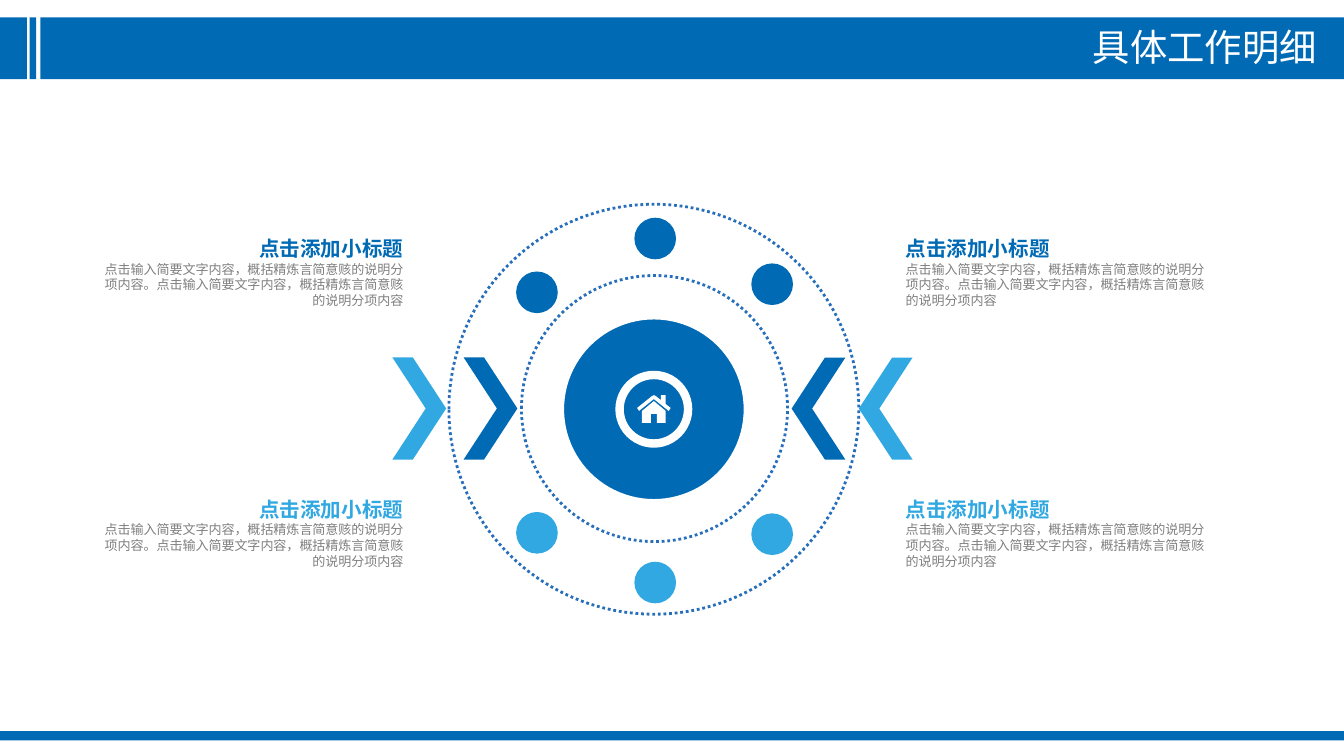
"""Build the slide of work details: two dotted rings, six dots and four captions."""
import pptx
import pptx.dml.color
import pptx.enum.dml
import pptx.enum.shapes
import pptx.enum.text
import pptx.util

Inches = pptx.util.Inches
Pt = pptx.util.Pt
RGBColor = pptx.dml.color.RGBColor
SHAPE = pptx.enum.shapes.MSO_SHAPE
ALIGN = pptx.enum.text.PP_ALIGN
ANCHOR = pptx.enum.text.MSO_ANCHOR
AUTO_SIZE = pptx.enum.text.MSO_AUTO_SIZE
ROUND_DOT = pptx.enum.dml.MSO_LINE.ROUND_DOT

BLUE = RGBColor(0x00, 0x6A, 0xB5)
SKY = RGBColor(0x31, 0xA8, 0xE1)
RING = RGBColor(0x27, 0x6E, 0xBB)
GRAY = RGBColor(0x80, 0x80, 0x80)
WHITE = RGBColor(0xFF, 0xFF, 0xFF)
FONT = "Arial"

SLIDE_WIDTH = Inches(10)
SLIDE_HEIGHT = SLIDE_WIDTH * 9 // 16
TITLE = "具体工作明细"
HEADING = "点击添加小标题"
BODY = "点击输入简要文字内容，概括精炼言简意赅的说明分项内容。" \
       "点击输入简要文字内容，概括精炼言简意赅的说明分项内容"
CAPTION_ROWS = [(1.71, BLUE), (3.65, SKY)]
CAPTION_COLUMNS = [(0.64, ALIGN.RIGHT), (6.64, ALIGN.LEFT)]
BARS = [(0.3, 0.13, 9.7, 0.46), (0, 0.13, 0.2, 0.46),
        (0.22, 0.13, 0.05, 0.46), (0, 5.44, 10, 0.07)]
CHEVRONS = [(3.45, 0, BLUE), (5.89, 180, BLUE), (2.92, 0, SKY), (6.39, 180, SKY)]
DISKS = [(4.19, 2.37, 1.35, 1), (4.61, 2.79, 0.51, 4.5)]
RINGS = [(3.34, 1.52, 3.05), (3.88, 2.05, 1.98)]
DOT_SIZE = 0.31
DOTS = [(4.72, 1.62, BLUE), (5.59, 1.96, BLUE), (3.84, 2.02, BLUE),
        (3.84, 3.81, SKY), (4.72, 4.18, SKY), (5.59, 3.82, SKY)]
HOUSE_PLACE = (4.74, 2.94)
HOUSE_WIDTH = 0.25
HOUSE_GRID = 34
ROOF = [(0, 13), (15, 1), (17, 0), (19, 1), (24, 5), (24, 0), (29, 0),
        (29, 9), (34, 13), (32, 16), (17, 4), (2, 16)]
WALLS = [(17, 6), (29, 16), (29, 28), (20, 28), (20, 19), (14, 19),
         (14, 28), (5, 28), (5, 16)]


def set_all(target, values):
    for name, value in values.items():
        setattr(target, name, value)


def paint(shape, fill=None, line=None, width=1, dash=None):
    shape.shadow.inherit = False
    if fill is None:
        shape.fill.background()
    else:
        shape.fill.solid()
        shape.fill.fore_color.rgb = fill
    if line is None:
        shape.line.fill.background()
    else:
        shape.line.color.rgb = line
        set_all(shape.line, {"width": Pt(width), "dash_style": dash})


def add_shape(slide, kind, box, **look):
    shape = slide.shapes.add_shape(kind, *map(Inches, box))
    paint(shape, **look)
    return shape


def add_circle(slide, left, top, size, **look):
    add_shape(slide, SHAPE.OVAL, (left, top, size, size), **look)


def write(paragraph, text, size, color, alignment, bold=False):
    paragraph.alignment = alignment
    run = paragraph.add_run()
    run.text = text
    set_all(run.font, {"name": FONT, "size": Pt(size), "bold": bold})
    run.font.color.rgb = color


def add_title(slide):
    title = slide.shapes.title
    set_all(title, {"left": Inches(5.63), "top": Inches(0.13),
                    "width": Inches(4.27), "height": Inches(0.44)})
    set_all(title.text_frame, {"word_wrap": True, "auto_size": AUTO_SIZE.NONE,
                               "vertical_anchor": ANCHOR.TOP})
    write(title.text_frame.paragraphs[0], TITLE, 20, WHITE, ALIGN.RIGHT)
    title.element.getparent().append(title.element)


def add_caption(slide, left, top, color, alignment):
    box = slide.shapes.add_textbox(*map(Inches, (left, top, 2.46, 0.64)))
    frame = box.text_frame
    frame.word_wrap = True
    write(frame.paragraphs[0], HEADING, 11, color, alignment, bold=True)
    write(frame.add_paragraph(), BODY, 7, GRAY, alignment)


def add_house(slide):
    builder = slide.shapes.build_freeform(*ROOF[0], scale=Inches(HOUSE_WIDTH) / HOUSE_GRID)
    builder.add_line_segments(ROOF[1:], close=True)
    builder.move_to(*WALLS[0])
    builder.add_line_segments(WALLS[1:], close=True)
    paint(builder.convert_to_shape(*map(Inches, HOUSE_PLACE)), fill=WHITE)


def main():
    presentation = pptx.Presentation()
    set_all(presentation, {"slide_width": SLIDE_WIDTH, "slide_height": SLIDE_HEIGHT})
    slide = presentation.slides.add_slide(presentation.slide_layouts[5])
    for box in BARS:
        add_shape(slide, SHAPE.RECTANGLE, box, fill=BLUE)
    add_title(slide)
    for left, rotation, color in CHEVRONS:
        chevron = add_shape(slide, SHAPE.CHEVRON, (left, 2.66, 0.4, 0.76), fill=color)
        chevron.adjustments[0] = 0.62
        chevron.rotation = rotation
    for top, color in CAPTION_ROWS:
        for left, alignment in CAPTION_COLUMNS:
            add_caption(slide, left, top, color, alignment)
    for left, top, size, width in DISKS:
        add_circle(slide, left, top, size, fill=BLUE, line=WHITE, width=width)
    add_house(slide)
    for left, top, size in RINGS:
        add_circle(slide, left, top, size, line=RING, width=1.5, dash=ROUND_DOT)
    for left, top, color in DOTS:
        add_circle(slide, left, top, DOT_SIZE, fill=color)
    presentation.save("out.pptx")


if __name__ == "__main__":
    main()
